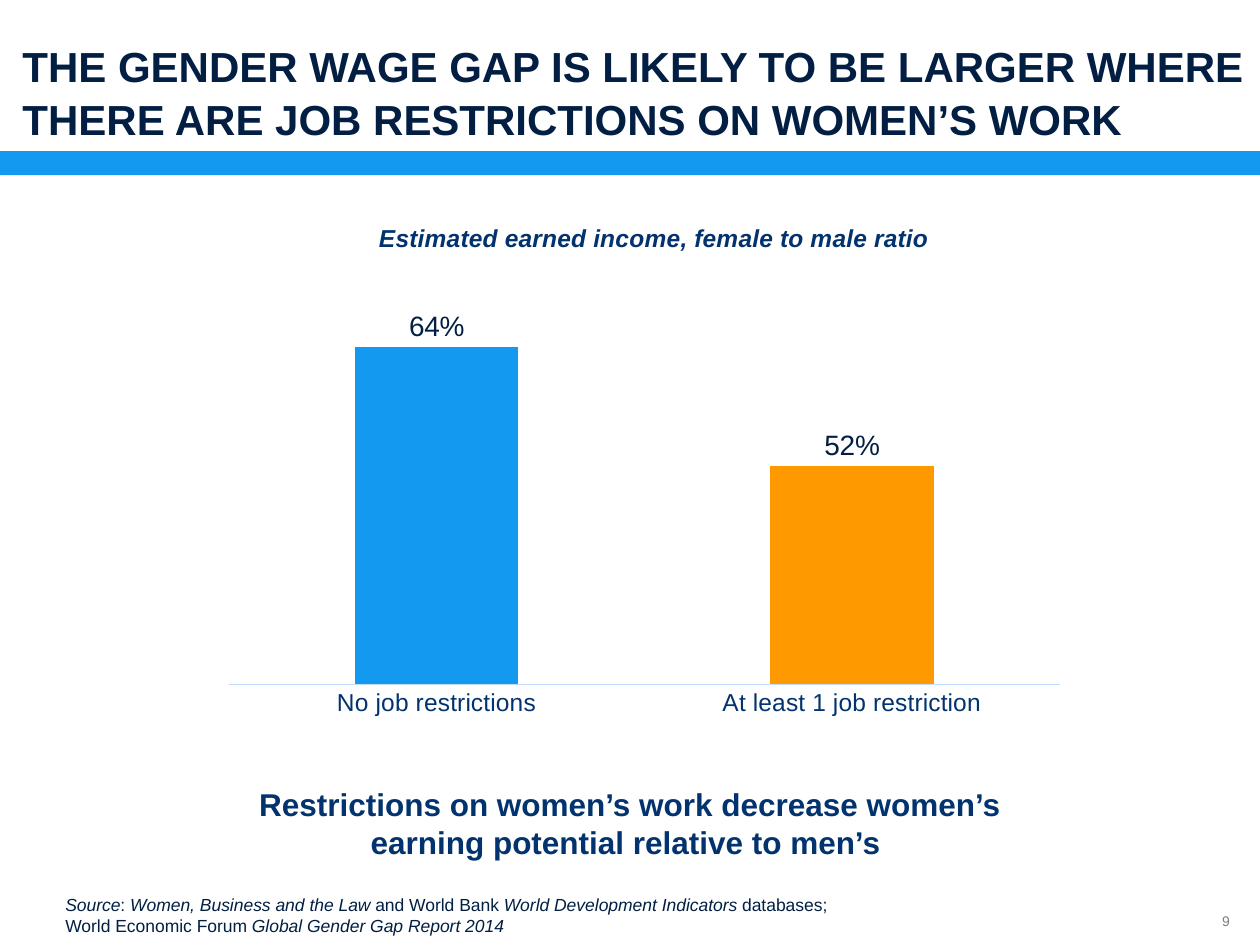
"""Build the gender wage gap slide with its column chart."""
import pptx
import pptx.chart.data
import pptx.dml.color
import pptx.enum.chart
import pptx.enum.shapes
import pptx.enum.text
import pptx.oxml
import pptx.oxml.ns
import pptx.util

NAVY, BLUE, SKY, ORANGE = "021F43", "03336E", "139AF0", "FF9900"
HEADING = "Estimated earned income, female to male ratio"


def rgb(value):
    return pptx.dml.color.RGBColor.from_string(value)


def write(p, text, size=10, color=NAVY, bold=False, italic=False):
    r = p.add_run()
    r.text = text
    r.font.name = "Arial"
    r.font.size = pptx.util.Pt(size)
    r.font.color.rgb = rgb(color)
    r.font.bold = bold
    r.font.italic = italic


prs = pptx.Presentation()
prs.slide_width = pptx.util.Inches(10)
prs.slide_height = pptx.util.Inches(7.5)
col, row = prs.slide_width / 10, prs.slide_height / 7.5
s = prs.slides.add_slide(prs.slide_layouts[6])

sp = s.shapes.add_shape(pptx.enum.shapes.MSO_SHAPE.RECTANGLE, 0, int(1.2 * row), prs.slide_width, int(0.19 * row))
sp.shadow.inherit = False
sp.fill.solid()
sp.fill.fore_color.rgb = rgb(SKY)
sp.line.fill.background()

data = pptx.chart.data.CategoryChartData(number_format="0%")
data.categories = ["No job restrictions", "At least 1 job restriction"]
data.add_series(HEADING, [0.64, 0.52])
chart = s.shapes.add_chart(
    pptx.enum.chart.XL_CHART_TYPE.COLUMN_CLUSTERED,
    int(0.83 * col), int(1.32 * row), int(8.24 * col), int(4.57 * row), data,
).chart
chart.has_legend = False
chart.font.name = "Arial"
chart.font.size = pptx.util.Pt(10)
chart.font.color.rgb = rgb(NAVY)
chart.has_title = True
write(chart.chart_title.text_frame.paragraphs[0], HEADING, size=14, color=BLUE, bold=True, italic=True)

axis = chart.category_axis
axis.major_tick_mark = pptx.enum.chart.XL_TICK_MARK.NONE
axis.tick_labels.font.name = "Arial"
axis.tick_labels.font.size = pptx.util.Pt(14)
axis.tick_labels.font.color.rgb = rgb(BLUE)
axis.format.line.color.rgb = rgb("BFDBFD")
axis.format.line.width = pptx.util.Pt(0.75)
axis = chart.value_axis
axis.minimum_scale, axis.maximum_scale = 0.3, 0.7
axis.has_major_gridlines = False
axis.visible = False

plot = chart.plots[0]
plot.vary_by_categories = False
plot.gap_width, plot.overlap = 154, -27
for i, color in enumerate([SKY, ORANGE]):
    fill = plot.series[0].points[i].format.fill
    fill.solid()
    fill.fore_color.rgb = rgb(color)
plot.has_data_labels = True
labels = plot.data_labels
labels.show_value = True
labels.number_format, labels.number_format_is_linked = "0%", False
labels.position = pptx.enum.chart.XL_LABEL_POSITION.OUTSIDE_END
labels.font.name = "Arial"
labels.font.size = pptx.util.Pt(16)
labels.font.color.rgb = rgb(NAVY)

area = chart.element.find(".//" + pptx.oxml.ns.qn("c:plotArea"))
title = chart.element.find(".//" + pptx.oxml.ns.qn("c:title"))
for parent, index, target, place in [
    (area, 0, '<c:layoutTarget val="inner"/>', {"x": 0.12, "y": 0.21, "w": 0.8, "h": 0.69}),
    (title, 1, "", {"x": 0.26, "y": 0.09}),
]:
    for old in parent.findall(pptx.oxml.ns.qn("c:layout")):
        parent.remove(old)
    modes = "".join(f'<c:{k}Mode val="edge"/>' for k in "xy")
    sizes = "".join(f'<c:{k} val="{v}"/>' for k, v in place.items())
    parent.insert(index, pptx.oxml.parse_xml(
        f'<c:layout {pptx.oxml.ns.nsdecls("c")}><c:manualLayout>{target}{modes}{sizes}</c:manualLayout></c:layout>'
    ))

frames = []
for x, y, w, h in [(0.08, 0.25, 9.92, 0.91), (1.86, 6.18, 6.28, 0.69), (0.42, 7.05, 7.17, 0.44), (9.7, 7.11, 0.6, 0.39)]:
    tf = s.shapes.add_textbox(int(x * col), int(y * row), int(w * col), int(h * row)).text_frame
    tf.word_wrap = True
    frames.append(tf)
heading, message, source, number = [tf.paragraphs[0] for tf in frames]

heading.line_spacing = 1.05
write(heading, "THE GENDER WAGE GAP IS LIKELY TO BE LARGER WHERE THERE ARE JOB RESTRICTIONS ON WOMEN’S WORK", size=24, bold=True)

message.alignment = pptx.enum.text.PP_ALIGN.CENTER
write(message, "Restrictions on women’s work decrease women’s earning potential relative to men’s ", size=18, color=BLUE, bold=True)

for i, text in enumerate(["Source", ": ", "Women, Business and the Law ", "and World Bank ", "World Development Indicators ", "databases; "]):
    write(source, text, italic=i % 2 == 0)
source.add_line_break()
write(source, "World Economic Forum ")
write(source, "Global Gender Gap Report 2014", italic=True)

tf = frames[-1]
tf.margin_left = tf.margin_top = tf.margin_right = tf.margin_bottom = 0
tf.vertical_anchor = pptx.enum.text.MSO_ANCHOR.MIDDLE
write(number, "9", size=8, color="7F7F7F")

prs.save("out.pptx")
